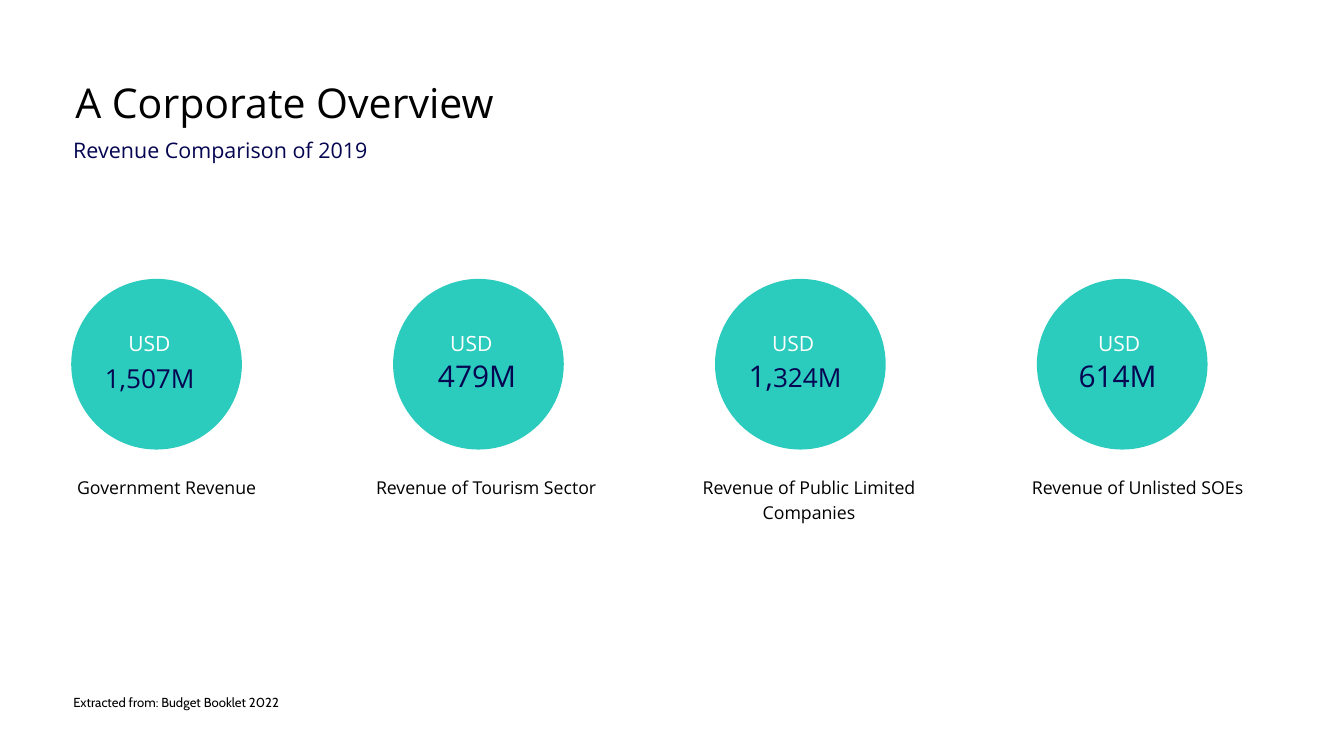
import pptx
import pptx.dml.color
import pptx.enum.shapes
import pptx.enum.text
import pptx.util

Inches, Pt = pptx.util.Inches, pptx.util.Pt
Align = pptx.enum.text.PP_ALIGN

BLACK, NAVY, WHITE, TEAL = "000000", "050551", "FFFFFF", "2BCBBD"
SANS = "Open Sans"

TITLE = "A Corporate Overview"
SUB = "Revenue Comparison of 2019"
SOURCE = "Extracted from: Budget Booklet 2022"

# amount runs (text, size), amount align, amount box (left, width), unit left,
# label, label box (left, width); each left is measured from its circle
ITEMS = [
    ([("1,507M", 28)], Align.JUSTIFY, (0.5, 1.53), 0.85,
     "Government Revenue", (0.08, 2.68)),
    ([("479M", 32)], Align.CENTER, (0.62, 1.26), 0.85,
     "Revenue of Tourism Sector", (-0.27, 3.31)),
    ([("1,", 32), ("324M", 28)], Align.JUSTIFY, (0.5, 1.53), 0.85,
     "Revenue of Public Limited Companies", (-0.68, 4.16)),
    ([("614M", 32)], Align.JUSTIFY, (0.62, 1.26), 0.91,
     "Revenue of Unlisted SOEs", (-0.08, 3.16)),
]
LEFT, TOP, SIZE, STEP = 1.06, 4.15, 2.54, 4.79


def color(code):
    return pptx.dml.color.RGBColor.from_string(code)


def write(shape, box, runs, tint, line, align=Align.LEFT, font=SANS):
    """Place a text shape and fill it with (text, size) runs."""
    shape.left, shape.top, shape.width, shape.height = map(Inches, box)
    frame = shape.text_frame
    frame.word_wrap = True
    frame.auto_size = pptx.enum.text.MSO_AUTO_SIZE.SHAPE_TO_FIT_TEXT
    frame.vertical_anchor = pptx.enum.text.MSO_ANCHOR.TOP
    frame.margin_left = frame.margin_right = 0
    frame.margin_top = frame.margin_bottom = 0
    para = frame.paragraphs[0]
    para.alignment = align
    para.line_spacing = Pt(line)
    para.space_before = Pt(0)
    for text, size in runs:
        run = para.add_run()
        run.text = text
        run.font.name = font
        run.font.size = Pt(size)
        run.font.color.rgb = color(tint)


deck = pptx.Presentation()
deck.slide_width, deck.slide_height = Inches(20), Inches(11.25)
slide = deck.slides.add_slide(deck.slide_layouts[5])
shapes = slide.shapes


def label(box, *args, **opts):
    write(shapes.add_textbox(0, 0, 0, 0), box, *args, **opts)


write(shapes.title, (1.12, 1.03, 6.81, 0.83), [(TITLE, 44)], BLACK, 61.6)
label((1.09, 1.98, 4.6, 0.43), [(SUB, 23)], NAVY, 32.2)

for i, (amount, align, spot, unit, name, place) in enumerate(ITEMS):
    x = LEFT + i * STEP
    disc = shapes.add_shape(pptx.enum.shapes.MSO_SHAPE.OVAL, Inches(x),
                            Inches(TOP), Inches(SIZE), Inches(SIZE))
    disc.shadow.inherit = False
    disc.fill.solid()
    disc.fill.fore_color.rgb = color(TEAL)
    disc.line.fill.background()

    label((x + spot[0], 5.2, spot[1], 0.62), amount, NAVY, 47.6, align)
    label((x + unit, 4.84, 0.72, 0.43), [("USD", 22.5)], WHITE, 32.2)
    label((x + place[0], 7.04, place[1], 0.35), [(name, 19)], BLACK, 26.6,
          Align.CENTER)

label((1.09, 10.24, 5.72, 0.31), [(SOURCE, 14)], BLACK, 23.8, font="Cabin")

deck.save("out.pptx")
